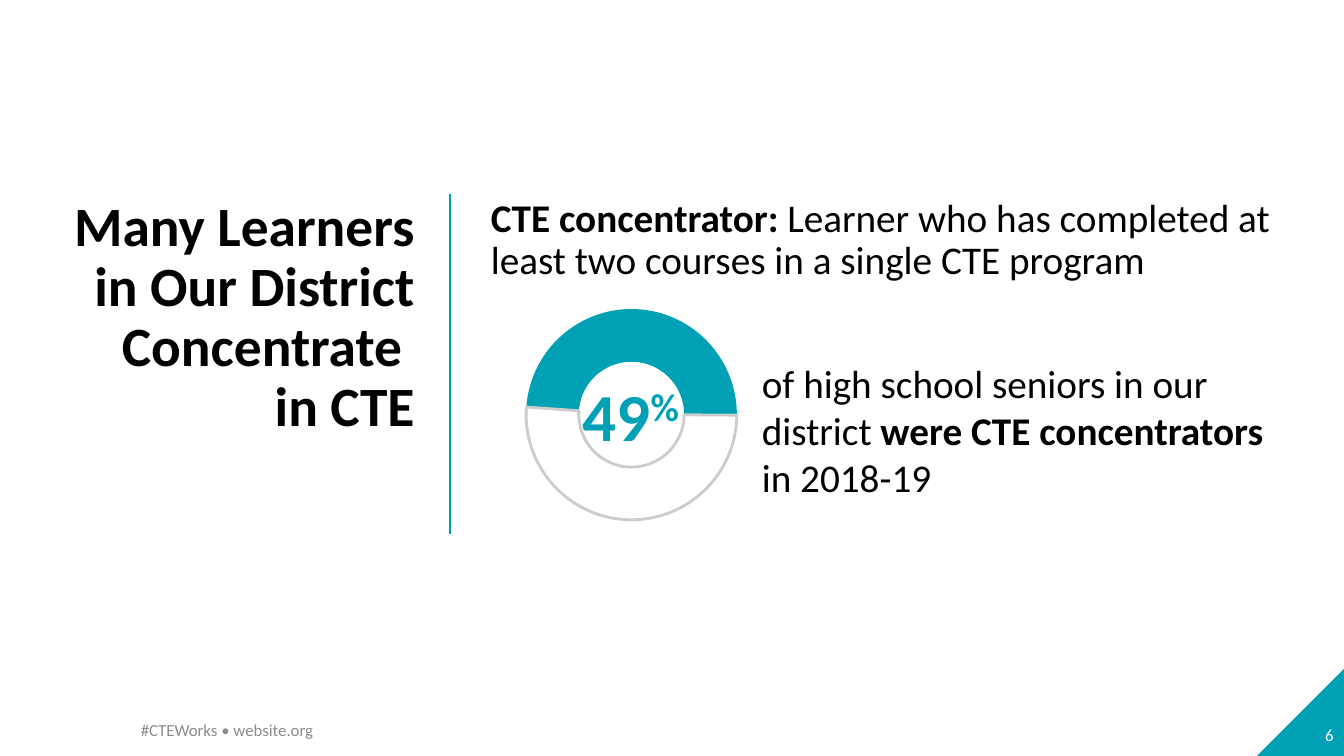
from dataclasses import dataclass

from lxml import etree
from pptx import Presentation
from pptx.chart.data import CategoryChartData
from pptx.dml.color import RGBColor
from pptx.enum.chart import XL_CHART_TYPE
from pptx.enum.shapes import MSO_CONNECTOR, MSO_SHAPE
from pptx.enum.text import MSO_ANCHOR, PP_ALIGN
from pptx.oxml import parse_xml
from pptx.oxml.ns import nsdecls, qn
from pptx.util import Cm, Pt

DOUGHNUT = XL_CHART_TYPE.DOUGHNUT
STRAIGHT = MSO_CONNECTOR.STRAIGHT
RIGHT_TRIANGLE = MSO_SHAPE.RIGHT_TRIANGLE
TOP, MIDDLE = MSO_ANCHOR.TOP, MSO_ANCHOR.MIDDLE
LEFT, RIGHT = PP_ALIGN.LEFT, PP_ALIGN.RIGHT


@dataclass(frozen=True)
class Theme:
    font: str = "Calibri"
    teal: RGBColor = RGBColor(0x00, 0xA1, 0xB4)
    black: RGBColor = RGBColor(0x00, 0x00, 0x00)
    white: RGBColor = RGBColor(0xFF, 0xFF, 0xFF)
    grey: RGBColor = RGBColor(0x8C, 0x8C, 0x8C)
    outline: RGBColor = RGBColor(0xCC, 0xCC, 0xCC)
    title: Pt = Pt(39.6)
    body: Pt = Pt(28)
    figure: Pt = Pt(48)
    small: Pt = Pt(12)
    chart: Pt = Pt(10)


THEME = Theme()


def set_font(font, size, color, bold=False):
    for name, value in {"name": THEME.font, "size": size, "bold": bold}.items():
        setattr(font, name, value)
    font.color.rgb = color


def add_text(page, place, spans, size, color=THEME.black, align=LEFT,
             anchor=TOP, spacing=1.0):
    """Add one paragraph of (text, bold) spans; a newline breaks the line."""
    box = page.shapes.add_textbox(*map(Cm, place))
    frame = box.text_frame
    for name, value in {"word_wrap": True, "vertical_anchor": anchor}.items():
        setattr(frame, name, value)
    para = frame.paragraphs[0]
    for name, value in {"alignment": align, "line_spacing": spacing}.items():
        setattr(para, name, value)
    for text, bold in spans:
        for index, line in enumerate(text.split("\n")):
            if index:
                para.add_line_break()
            span = para.add_run()
            span.text = line
            set_font(span.font, size, color, bold)
    return para


def raise_span(span):
    span.font._element.set("baseline", "30000")


def add_corner(page, left, top, side):
    corner = page.shapes.add_shape(RIGHT_TRIANGLE, Cm(left), Cm(top), Cm(side), Cm(side))
    corner.shadow.inherit = False
    corner.fill.solid()
    corner.fill.fore_color.rgb = THEME.teal
    corner.line.fill.background()
    corner._element.spPr.find(qn("a:xfrm")).set("flipH", "1")


def add_divider(page, x, top, bottom):
    divider = page.shapes.add_connector(STRAIGHT, Cm(x), Cm(top), Cm(x), Cm(bottom))
    divider.line.color.rgb = THEME.teal
    divider.line.width = Pt(1.5)
    etree.SubElement(divider._element.spPr, qn("a:effectLst"))


def place_plot(chart, **fractions):
    """Fix the plot area by fractions of the chart frame."""
    modes = '<c:xMode val="edge"/><c:yMode val="edge"/>'
    sizes = "".join(f'<c:{key} val="{value}"/>' for key, value in fractions.items())
    layout = parse_xml(
        f'<c:layout {nsdecls("c")}><c:manualLayout><c:layoutTarget val="inner"/>'
        f"{modes}{sizes}</c:manualLayout></c:layout>")
    plot_area = chart._chartSpace.chart.plotArea
    for old in plot_area.findall(qn("c:layout")):
        plot_area.remove(old)
    plot_area.insert(0, layout)


def add_ring(page, place, values):
    data = CategoryChartData()
    data.categories = [str(number + 1) for number in range(len(values))]
    data.add_series("Series 1", values)
    chart = page.shapes.add_chart(DOUGHNUT, *map(Cm, place), data).chart
    chart.has_legend = False
    chart.has_title = False
    set_font(chart.font, THEME.chart, THEME.black)
    plot = chart.plots[0]
    plot.vary_by_categories = False
    ring = plot._element
    for tag, value in {"c:firstSliceAng": "274", "c:holeSize": "58"}.items():
        ring.find(qn(tag)).set("val", value)
    share, rest = (plot.series[0].points[index].format for index in range(2))
    share.fill.solid()
    share.fill.fore_color.rgb = THEME.teal
    share.line.fill.background()
    rest.fill.background()
    rest.line.color.rgb = THEME.outline
    rest.line.width = Pt(2)
    place_plot(chart, x=0.15, y=0.05, w=0.7, h=0.89)


def main():
    deck = Presentation()
    deck.slide_width, deck.slide_height = Cm(33.87), Cm(19.05)
    page = deck.slides.add_slide(deck.slide_layouts[6])

    add_corner(page, 31.68, 16.85, 2.2)
    add_text(page, (1.35, 4.88, 9.35, 5.2),
             [("Many Learners in Our District Concentrate \nin CTE", True)],
             THEME.title, align=RIGHT, spacing=0.9)
    add_text(page, (12.12, 4.88, 20.37, 3.02),
             [("CTE concentrator:", True),
              (" Learner who has completed at least two courses in a single CTE program",
               False)],
             THEME.body, spacing=0.9)
    add_text(page, (26.24, 18.01, 7.62, 1.02), [("6", False)],
             THEME.small, THEME.white, RIGHT, MIDDLE)
    add_divider(page, 11.35, 4.88, 13.46)
    add_ring(page, (12.12, 7.49, 7.59, 5.97), (49, 51))
    add_text(page, (18.95, 8.92, 13.54, 3.84),
             [("of high school seniors in our district ", False),
              ("were CTE concentrators ", True),
              ("in 2018-19", False)],
             THEME.body)
    figure = add_text(page, (14.43, 9.32, 4.14, 2.31), [("49", True), ("%", True)],
                      THEME.figure, THEME.teal)
    raise_span(figure.runs[1])
    add_text(page, (3.3, 17.88, 11.43, 1.02), [("#CTEWorks • website.org", False)],
             THEME.small, THEME.grey, anchor=MIDDLE)
    deck.save("out.pptx")


if __name__ == "__main__":
    main()
